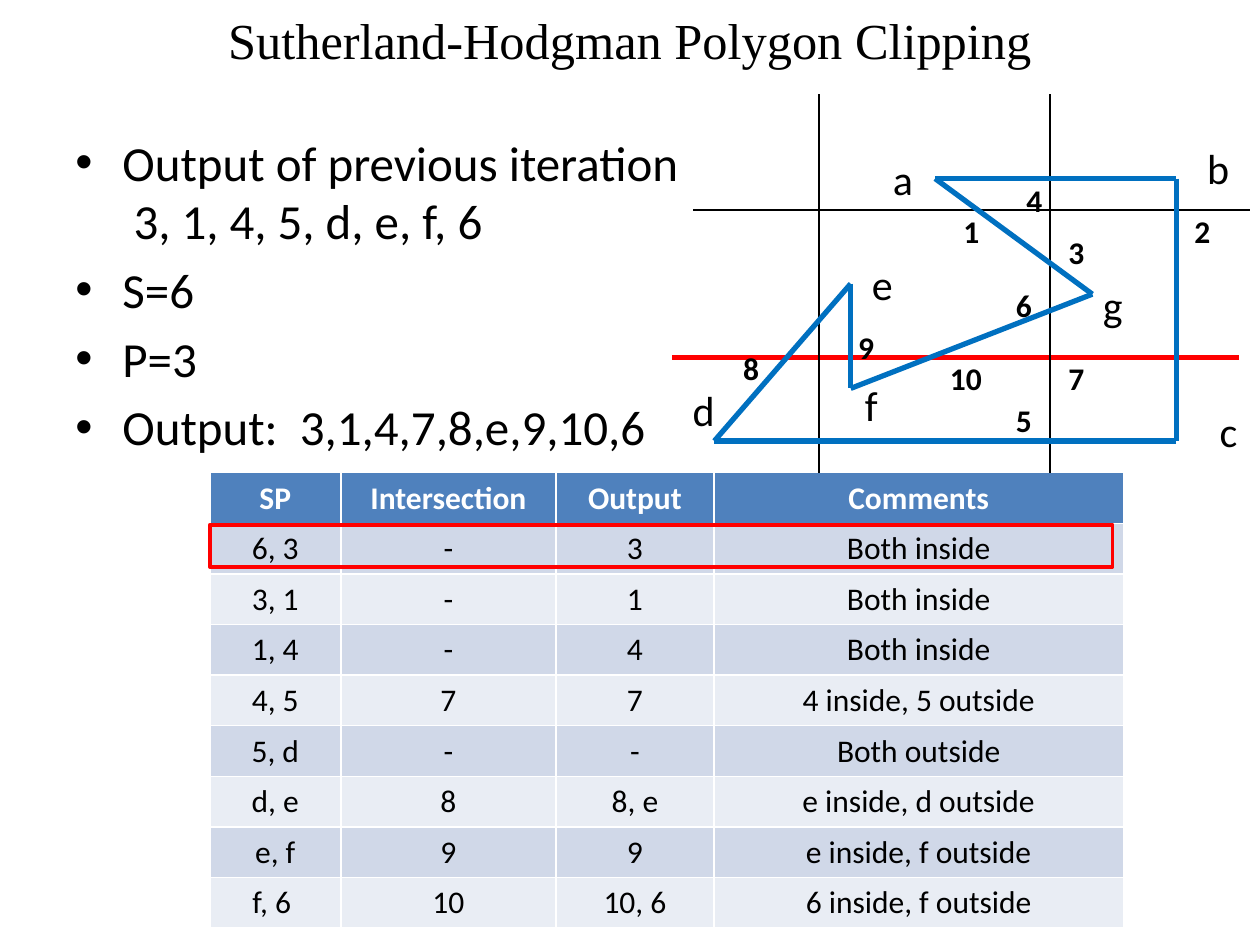
from lxml import etree
from pptx import Presentation
from pptx import util as u
from pptx.dml import color
from pptx.enum import shapes, text
from pptx.oxml import ns

BLACK, WHITE, RED, BLUE = "000000", "FFFFFF", "FF0000", "0070C0"
HEADER, BANDS = "4F81BD", ("D0D8E8", "E9EDF4")


def rgb(value):
    return color.RGBColor.from_string(value)


def box(*lengths):
    return [u.Cm(n) for n in lengths]


class SlideBuilder:
    font = "Calibri"

    def __init__(self, s):
        self.s = s

    def run(self, p, content, size, hue=BLACK, bold=False, font=None):
        r = p.add_run()
        r.text = content
        r.font.name = font or self.font
        r.font.size = u.Pt(size)
        r.font.bold = bold
        r.font.color.rgb = rgb(hue)

    def title(self, content, bounds):
        sp = self.s.shapes.title
        sp.left, sp.top, sp.width, sp.height = box(*bounds)
        tf = sp.text_frame
        tf.auto_size = text.MSO_AUTO_SIZE.NONE
        tf.vertical_anchor = text.MSO_ANCHOR.MIDDLE
        p = tf.paragraphs[0]
        p.alignment = text.PP_ALIGN.CENTER
        self.run(p, content, 28.8, font="Times New Roman")

    def bullets(self, items, bounds):
        tf = self.s.shapes.add_textbox(*box(*bounds)).text_frame
        tf.word_wrap = True
        for i, lines in enumerate(items):
            p = tf.add_paragraph() if i else tf.paragraphs[0]
            p.space_before = u.Pt(5.6)
            pPr = p._p.get_or_add_pPr()
            pPr.set("marL", str(u.Cm(0.95)))
            pPr.set("indent", str(-u.Cm(0.95)))
            etree.SubElement(pPr, ns.qn("a:buFont"), typeface="Arial")
            etree.SubElement(pPr, ns.qn("a:buChar"), char="•")
            for j, line in enumerate(lines):
                if j:
                    p.add_line_break()
                self.run(p, line, 28)

    def label(self, content, bounds, size, bold=False):
        tf = self.s.shapes.add_textbox(*box(*bounds)).text_frame
        tf.word_wrap = True
        tf.margin_left = tf.margin_right = tf.margin_top = tf.margin_bottom = 0
        tf.vertical_anchor = text.MSO_ANCHOR.MIDDLE
        p = tf.paragraphs[0]
        p.alignment = text.PP_ALIGN.CENTER
        self.run(p, content, size, bold=bold)

    def line(self, start, end, hue, width):
        c = self.s.shapes.add_connector(
            shapes.MSO_CONNECTOR.STRAIGHT, *box(*start, *end))
        c.line.color.rgb = rgb(hue)
        c.line.width = u.Pt(width)
        etree.SubElement(c._element.spPr, ns.qn("a:effectLst"))

    def frame(self, bounds, hue, width):
        sp = self.s.shapes.add_shape(shapes.MSO_SHAPE.RECTANGLE, *box(*bounds))
        sp.shadow.inherit = False
        sp.fill.background()
        sp.line.color.rgb = rgb(hue)
        sp.line.width = u.Pt(width)

    def table(self, rows, left, top, widths, row_height):
        t = self.s.shapes.add_table(
            len(rows), len(widths),
            *box(left, top, sum(widths), row_height * len(rows))).table
        for column, width in zip(t.columns, widths):
            column.width = u.Cm(width)
        for i, row in enumerate(rows):
            for j, content in enumerate(row):
                cell = t.cell(i, j)
                cell.fill.solid()
                cell.fill.fore_color.rgb = rgb(BANDS[(i - 1) % 2] if i else HEADER)
                p = cell.text_frame.paragraphs[0]
                p.alignment = text.PP_ALIGN.CENTER
                self.run(p, content, 18, BLACK if i else WHITE, bold=i == 0)


CLIP_LINES = [
    ((13.77, 7.2), (24.97, 7.2), BLACK, 1.5),
    ((13.97, 4.23), (25.19, 4.23), BLACK, 1.5),
    ((13.55, 7.2), (24.97, 7.2), RED, 3),
    ((16.51, 1.9), (16.51, 9.53), BLACK, 0.75),
    ((21.17, 1.9), (21.17, 9.53), BLACK, 1),
]
POLYGON = [(18.85, 3.6), (23.71, 3.6), (23.71, 8.89), (14.4, 8.89),
           (17.15, 5.72), (17.15, 7.83), (22.02, 5.93)]
VERTEX_LABELS = {
    "a": (17.57, 3.18), "b": (23.92, 2.96), "g": (21.8, 5.72),
    "e": (17.15, 5.29), "f": (16.93, 7.73), "d": (13.55, 7.83),
    "c": (24.13, 8.25),
}
POINT_LABELS = {
    "1": (19.05, 4.23), "2": (23.71, 4.23), "3": (21.17, 4.66),
    "4": (20.32, 3.6), "5": (20.11, 8.04), "6": (20.11, 5.72),
    "7": (21.17, 7.2), "8": (14.61, 6.99), "9": (16.93, 6.56),
    "10": (18.94, 7.2),
}
STEPS = [
    ("SP", "Intersection", "Output", "Comments"),
    ("6, 3", "-", "3", "Both inside"),
    ("3, 1", "-", "1", "Both inside"),
    ("1, 4", "-", "4", "Both inside"),
    ("4, 5", "7", "7", "4 inside, 5 outside"),
    ("5, d", "-", "-", "Both outside"),
    ("d, e", "8", "8, e", "e inside, d outside"),
    ("e, f", "9", "9", "e inside, f outside"),
    ("f, 6 ", "10", "10, 6", "6 inside, f outside"),
]


def main():
    prs = Presentation()
    prs.slide_width, prs.slide_height = box(25.4, 19.05)
    b = SlideBuilder(prs.slides.add_slide(prs.slide_layouts[5]))
    b.title("Sutherland-Hodgman Polygon Clipping", (1.27, 0, 22.86, 1.57))
    b.bullets([
        ("Output of previous iteration", " 3, 1, 4, 5, d, e, f, 6"),
        ("S=6",),
        ("P=3",),
        ("Output:  3,1,4,7,8,e,9,10,6",),
    ], (1.27, 2.54, 22.86, 15.88))
    b.table(STEPS, 4.23, 9.53, (2.64, 4.34, 3.18, 8.26), 1.02)
    for clip_line in CLIP_LINES:
        b.line(*clip_line)
    for start, end in zip(POLYGON, POLYGON[1:] + POLYGON[:1]):
        b.line(start, end, BLUE, 3)
    for name, place in VERTEX_LABELS.items():
        b.label(name, (*place, 1.27, 0.85), 24)
    for name, place in POINT_LABELS.items():
        b.label(name, (*place, 1.06, 0.85), 18, bold=True)
    b.frame((4.23, 10.58, 18.2, 0.85), RED, 2)
    prs.save("out.pptx")


if __name__ == "__main__":
    main()
